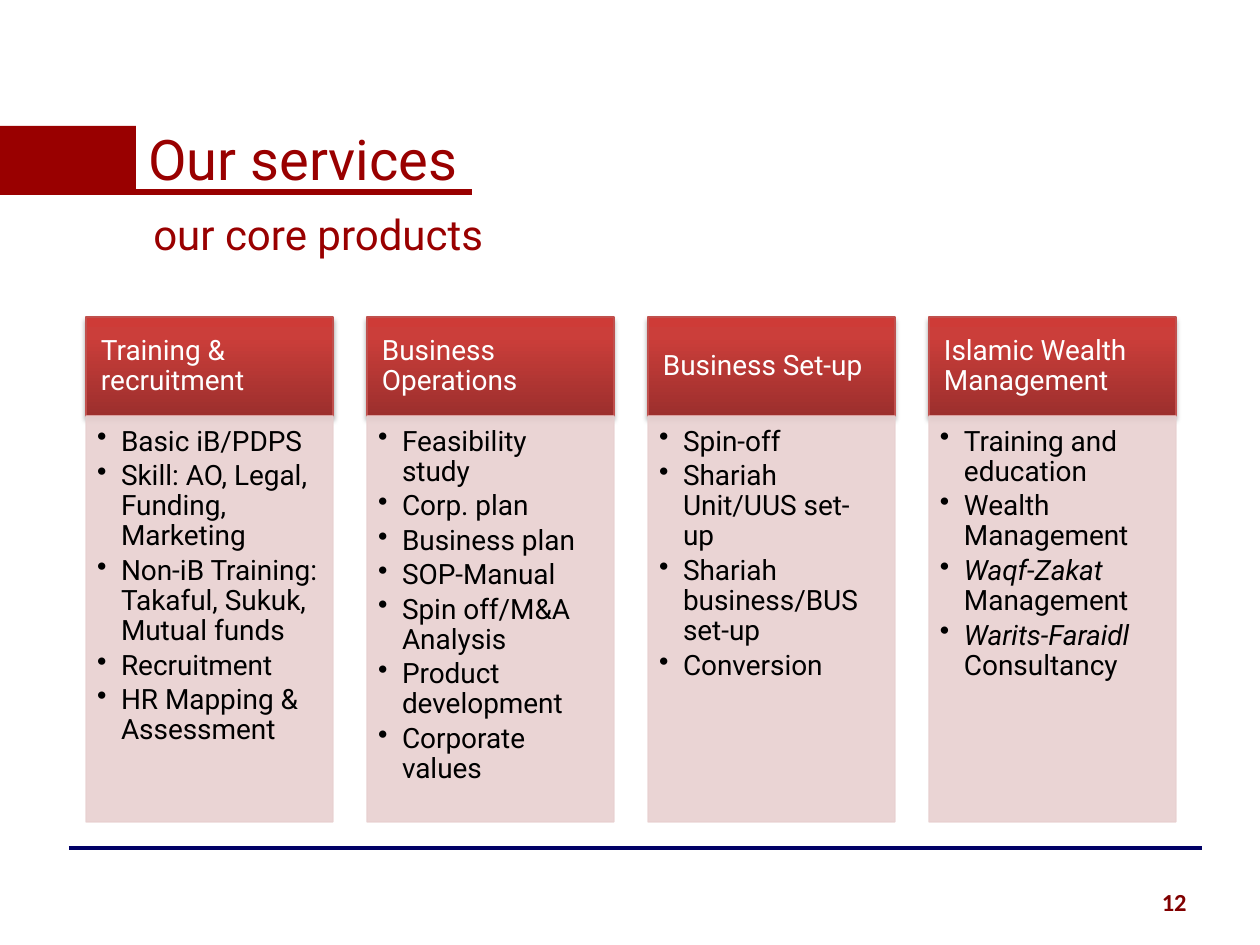
from lxml import etree
from pptx import Presentation
from pptx.dml.color import RGBColor
from pptx.enum.shapes import MSO_CONNECTOR, MSO_SHAPE
from pptx.enum.text import MSO_ANCHOR, PP_ALIGN
from pptx.oxml import parse_xml
from pptx.oxml.ns import qn
from pptx.util import Emu, Pt

RECTANGLE = MSO_SHAPE.RECTANGLE
LEFT, RIGHT = PP_ALIGN.LEFT, PP_ALIGN.RIGHT
TOP, MIDDLE = MSO_ANCHOR.TOP, MSO_ANCHOR.MIDDLE
NAMESPACE = 'xmlns:a="http://schemas.openxmlformats.org/drawingml/2006/main"'

COLORS = {
    "title": "990000", "number": "800000", "rule": "000066",
    "header_line": "C0504D", "header_dark": "9C2F2D",
    "header_mid": "CB3E3A", "header_light": "CE3B37",
    "body": "E8D0D0", "white": "FFFFFF", "black": "000000",
}
FONT = "Roboto"

# A bullet is a list of (text, italic) runs or a plain string.
SERVICES = [
    ("Training & recruitment", [
        "Basic iB/PDPS", "Skill: AO, Legal, Funding, Marketing",
        "Non-iB Training: Takaful, Sukuk, Mutual funds",
        "Recruitment", "HR Mapping & Assessment"]),
    ("Business Operations", [
        "Feasibility study", "Corp. plan", "Business plan", "SOP-Manual",
        "Spin off/M&A Analysis", "Product development", "Corporate values"]),
    ("Business Set-up", [
        "Spin-off", "Shariah Unit/UUS set-up",
        "Shariah business/BUS set-up", "Conversion"]),
    ("Islamic Wealth Management", [
        "Training and education", "Wealth Management",
        [("Waqf-Zakat ", True), ("Management", False)],
        [("Warits-Faraidl ", True), ("Consultancy", False)]]),
]
# text, box, size, font, color, bold, alignment
LABELS = [
    ("Our services", (136, 118, 378, 81), 32, FONT, "title", False, LEFT),
    ("our core products", (141, 202, 489, 63), 24, FONT, "title", False, LEFT),
    ("12", (905, 881, 294, 44), 14, "Calibri", "number", True, RIGHT),
]
TITLE_BARS = [(-32, 126, 168, 63), (-32, 189, 504, 6)]
RULE = (69, 848, 1202, 848)

COLUMN_LEFT, COLUMN_WIDTH, COLUMN_PITCH = 86, 247, 281
HEADER_TOP, HEADER_HEIGHT, BODY_HEIGHT = 317, 99, 406
HEADER_INSETS, BODY_INSETS = (15, 9, 15, 9), (11, 11, 15, 18)
BULLET_INDENT = 24


def px(value):
    return Emu(round(value * 914400 / 126))


def rgb(name):
    return RGBColor.from_string(COLORS[name])


def set_font(paragraph, size, color, name=FONT, bold=False):
    font = paragraph.font
    font.size, font.name, font.bold = Pt(size), name, bold
    font.color.rgb = rgb(color)


def add_rectangle(slide, box, fill, line=None):
    shape = slide.shapes.add_shape(RECTANGLE, *map(px, box))
    shape.shadow.inherit = False
    shape.fill.solid()
    shape.fill.fore_color.rgb = rgb(fill)
    if line:
        shape.line.color.rgb = rgb(line)
        shape.line.width = Pt(0.75)
    else:
        shape.line.fill.background()
    return shape


def prepare_text(shape, insets, anchor):
    frame = shape.text_frame
    frame.word_wrap = True
    frame.vertical_anchor = anchor
    (frame.margin_left, frame.margin_top,
     frame.margin_right, frame.margin_bottom) = map(px, insets)
    return frame


def add_header(slide, box, title):
    shape = add_rectangle(slide, box, "header_mid", "header_line")
    stops = ((0, "header_dark"), (80, "header_mid"), (100, "header_light"))
    stop_xml = "".join(
        f'<a:gs pos="{position * 1000}"><a:srgbClr val="{COLORS[color]}"/></a:gs>'
        for position, color in stops)
    properties = shape.element.spPr
    properties.replace(properties.find(qn("a:solidFill")), parse_xml(
        f'<a:gradFill {NAMESPACE} rotWithShape="1"><a:gsLst>{stop_xml}</a:gsLst>'
        '<a:lin ang="16200000" scaled="0"/></a:gradFill>'))
    properties.find(qn("a:effectLst")).append(parse_xml(
        f'<a:outerShdw {NAMESPACE} blurRad="{Pt(3.1)}" dist="{Pt(1.8)}" '
        'dir="5400000" rotWithShape="0"><a:srgbClr val="000000">'
        '<a:alpha val="35000"/></a:srgbClr></a:outerShdw>'))
    paragraph = prepare_text(shape, HEADER_INSETS, MIDDLE).paragraphs[0]
    paragraph.text = title
    paragraph.alignment = LEFT
    paragraph.line_spacing = 0.9
    set_font(paragraph, 16, "white")


def add_body(slide, box, bullets):
    shape = add_rectangle(slide, box, "body", "body")
    for color in shape.element.spPr.iter(qn("a:srgbClr")):
        etree.SubElement(color, qn("a:alpha")).set("val", "90000")
    frame = prepare_text(shape, BODY_INSETS, TOP)
    for index, bullet in enumerate(bullets):
        paragraph = frame.add_paragraph() if index else frame.paragraphs[0]
        paragraph.alignment = LEFT
        paragraph.line_spacing = 0.9
        paragraph.space_after = Pt(2.4)
        properties = paragraph._p.get_or_add_pPr()
        properties.set("marL", str(px(BULLET_INDENT)))
        properties.set("indent", str(-px(BULLET_INDENT)))
        etree.SubElement(properties, qn("a:buChar")).set("char", "•")
        set_font(paragraph, 16, "black")
        for text, italic in [(bullet, False)] if isinstance(bullet, str) else bullet:
            run = paragraph.add_run()
            run.text = text
            if italic:
                run.font.italic = True


def add_label(slide, text, box, size, font, color, bold, alignment):
    label = slide.shapes.add_textbox(*map(px, box))
    label.text_frame.word_wrap = True
    paragraph = label.text_frame.paragraphs[0]
    paragraph.text = text
    paragraph.alignment = alignment
    set_font(paragraph, size, color, font, bold)


def main():
    presentation = Presentation()
    presentation.slide_width, presentation.slide_height = px(1260), px(945)
    slide = presentation.slides.add_slide(presentation.slide_layouts[6])

    rule = slide.shapes.add_connector(MSO_CONNECTOR.STRAIGHT, *map(px, RULE))
    rule.line.color.rgb = rgb("rule")
    rule.line.width = Pt(2.25)
    etree.SubElement(rule.element.spPr, qn("a:effectLst"))

    for index, (title, bullets) in enumerate(SERVICES):
        left = COLUMN_LEFT + index * COLUMN_PITCH
        add_header(slide, (left, HEADER_TOP, COLUMN_WIDTH, HEADER_HEIGHT), title)
        add_body(slide, (left, HEADER_TOP + HEADER_HEIGHT,
                         COLUMN_WIDTH, BODY_HEIGHT), bullets)

    for box in TITLE_BARS:
        add_rectangle(slide, box, "title")
    for label in LABELS:
        add_label(slide, *label)

    presentation.save("out.pptx")


if __name__ == "__main__":
    main()
